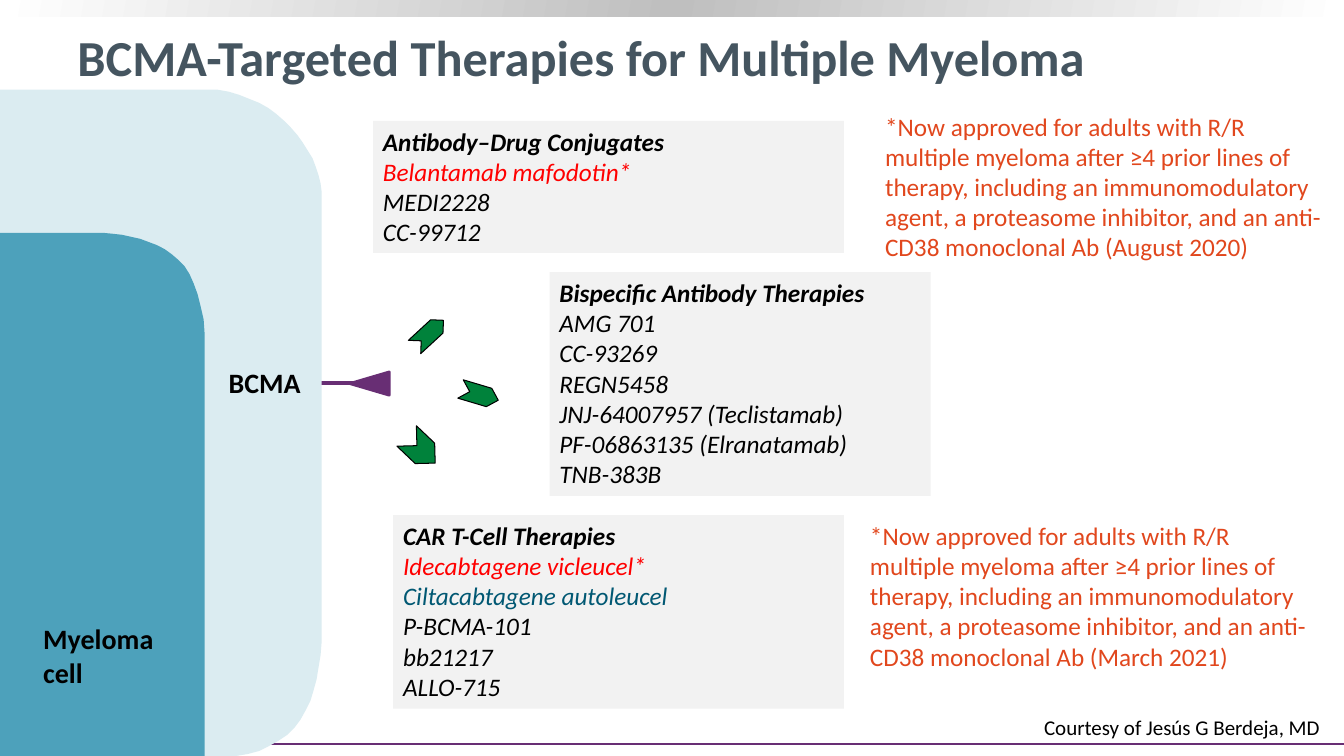
"""Build the slide on BCMA-targeted therapies for multiple myeloma."""
from copy import deepcopy

from pptx import Presentation
from pptx.dml.color import RGBColor
from pptx.enum.shapes import MSO_CONNECTOR as CONNECTOR, MSO_SHAPE as SHAPE
from pptx.enum.text import MSO_ANCHOR as ANCHOR, PP_ALIGN as ALIGN
from pptx.oxml.ns import qn
from pptx.util import Pt
from lxml import etree

PX = 9144
WIDTH, HEIGHT = 1333, 750
FONT = "Calibri"
BLACK, RED, BLUE, ORANGE = "000000", "FF0000", "015873", "E1471D"
PURPLE, GREEN, PANEL = "682E74", "00823B", "F2F2F2"

BAR_STOPS = [(0, "FFFFFF"), (0.5, "BFBFBF"), (1, "FFFFFF")]
LINES = [((0, 738), (WIDTH, 738), 1.5), ((350, 380), (317, 380), 2.5)]
CELL_OUTLINES = [
    ("DBECF1", (-1, 751), [
        [(-1, 89)], [(216, 89)],
        [(276, 97), (315, 147), (319, 190)], [(319, 637)],
        [(315, 706), (288, 756), (205, 750)]]),
    ("4DA1BB", (-1, 231), [
        [(-1, 751)], [(203, 751)], [(203, 332)],
        [(198, 248), (154, 236), (102, 231)]]),
]
THERAPIES = [
    ((370, 120, 467, 131), "Antibody–Drug Conjugates",
     [("Belantamab mafodotin*", RED), ("MEDI2228", BLACK), ("CC-99712", BLACK)]),
    ((545, 270, 378, 222), "Bispecific Antibody Therapies",
     [(name, BLACK) for name in (
         "AMG 701", "CC-93269", "REGN5458", "JNJ-64007957 (Teclistamab)",
         "PF-06863135 (Elranatamab)", "TNB-383B")]),
    ((390, 511, 447, 192), "CAR T-Cell Therapies",
     [("Idecabtagene vicleucel*", RED), ("Ciltacabtagene autoleucel", BLUE),
      ("P-BCMA-101", BLACK), ("bb21217", BLACK), ("ALLO-715", BLACK)]),
]
CHEVRONS = [((406, 322, 39, 18), 317.3), ((456, 382, 39, 19), 16.6),
            ((398, 432, 39, 28), 43.6)]
APPROVAL = ("*Now approved for adults with R/R multiple myeloma after ≥4 prior "
            "lines of therapy, including an immunomodulatory agent, a proteasome "
            "inhibitor, and an anti-CD38 monoclonal Ab ({})")
LABELS = [
    ((217, 358, 194, 44), "BCMA", 20, BLACK, True, ALIGN.LEFT),
    ((33, 612, 137, 77), "Myeloma\vcell", 20, BLACK, True, ALIGN.LEFT),
    ((853, 511, 462, 162), APPROVAL.format("March 2021"), 18, ORANGE, False, ALIGN.LEFT),
    ((868, 105, 462, 162), APPROVAL.format("August 2020"), 18, ORANGE, False, ALIGN.LEFT),
    ((971, 704, 348, 35), "Courtesy of Jesús G Berdeja, MD", 15, BLACK, False, ALIGN.RIGHT),
]


def color(value):
    return RGBColor.from_string(value)


def emu(lengths):
    return [length * PX for length in lengths]


def paint(shape, fill, line=None, width=0.75):
    shape.shadow.inherit = False
    shape.fill.solid()
    shape.fill.fore_color.rgb = color(fill)
    if line:
        shape.line.color.rgb = color(line)
        shape.line.width = Pt(width)
    else:
        shape.line.fill.background()


def add_shape(kind, place, fill, line=None, width=0.75, turn=0):
    shape = page.shapes.add_shape(kind, *emu(place))
    paint(shape, fill, line, width)
    shape.rotation = turn
    return shape


def add_bar():
    bar = add_shape(SHAPE.RECTANGLE, (0, 0, WIDTH, 16), "FFFFFF")
    bar.fill.gradient()
    bar.fill.gradient_angle = 170
    stop_list = bar.element.spPr.find(qn("a:gradFill")).find(qn("a:gsLst"))
    stop_list.append(deepcopy(stop_list[0]))
    for stop, (position, value) in zip(bar.fill.gradient_stops, BAR_STOPS):
        stop.position = position
        stop.color.rgb = color(value)


def add_line(start, end, width):
    line = page.shapes.add_connector(CONNECTOR.STRAIGHT, *emu(start + end))
    line.line.color.rgb = color(PURPLE)
    line.line.width = Pt(width)
    etree.SubElement(line.element.spPr, qn("a:effectLst"))


def curve(start, first, second, end, steps=16):
    for step in range(1, steps + 1):
        t = step / steps
        u = 1 - t
        yield tuple(u**3 * a + 3 * u * u * t * b + 3 * u * t * t * c + t**3 * d
                    for a, b, c, d in zip(start, first, second, end))


def add_outline(fill, start, segments):
    points = [start]
    for segment in segments:
        points += curve(points[-1], *segment) if len(segment) == 3 else segment
    builder = page.shapes.build_freeform(*start, scale=PX)
    builder.add_line_segments(points[1:], close=True)
    paint(builder.convert_to_shape(), fill)


def style(para, size, value, bold=False, italic=False, align=ALIGN.LEFT):
    para.alignment = align
    font = para.font
    font.name, font.size = FONT, Pt(size)
    font.bold, font.italic = bold, italic
    font.color.rgb = color(value)


def add_label(place, text, size, value, bold, align):
    frame = page.shapes.add_textbox(*emu(place)).text_frame
    frame.word_wrap = True
    frame.text = text
    style(frame.paragraphs[0], size, value, bold, align=align)
    return frame


def add_therapies(place, heading, drugs):
    frame = add_shape(SHAPE.RECTANGLE, place, PANEL).text_frame
    frame.word_wrap = True
    frame.vertical_anchor = ANCHOR.TOP
    frame.text = "\n".join([heading] + [name for name, _ in drugs])
    values = [BLACK] + [value for _, value in drugs]
    for index, (para, value) in enumerate(zip(frame.paragraphs, values)):
        style(para, 18, value, bold=index == 0, italic=True)


deck = Presentation()
deck.slide_width, deck.slide_height = emu((WIDTH, HEIGHT))
page = deck.slides.add_slide(deck.slide_layouts[6])

add_bar()
for line in LINES:
    add_line(*line)
add_shape(SHAPE.ISOSCELES_TRIANGLE, (355, 361, 23, 39), PURPLE, PURPLE, 2, 270)
for outline in CELL_OUTLINES:
    add_outline(*outline)
title = add_label((67, 26, 1218, 121), "BCMA-Targeted Therapies for Multiple Myeloma",
                  36, "455560", True, ALIGN.LEFT)
title.margin_top = 0
for therapy in THERAPIES:
    add_therapies(*therapy)
for place, turn in CHEVRONS:
    add_shape(SHAPE.CHEVRON, place, GREEN, BLACK, turn=turn)
for label in LABELS:
    add_label(*label)

deck.save("out.pptx")
